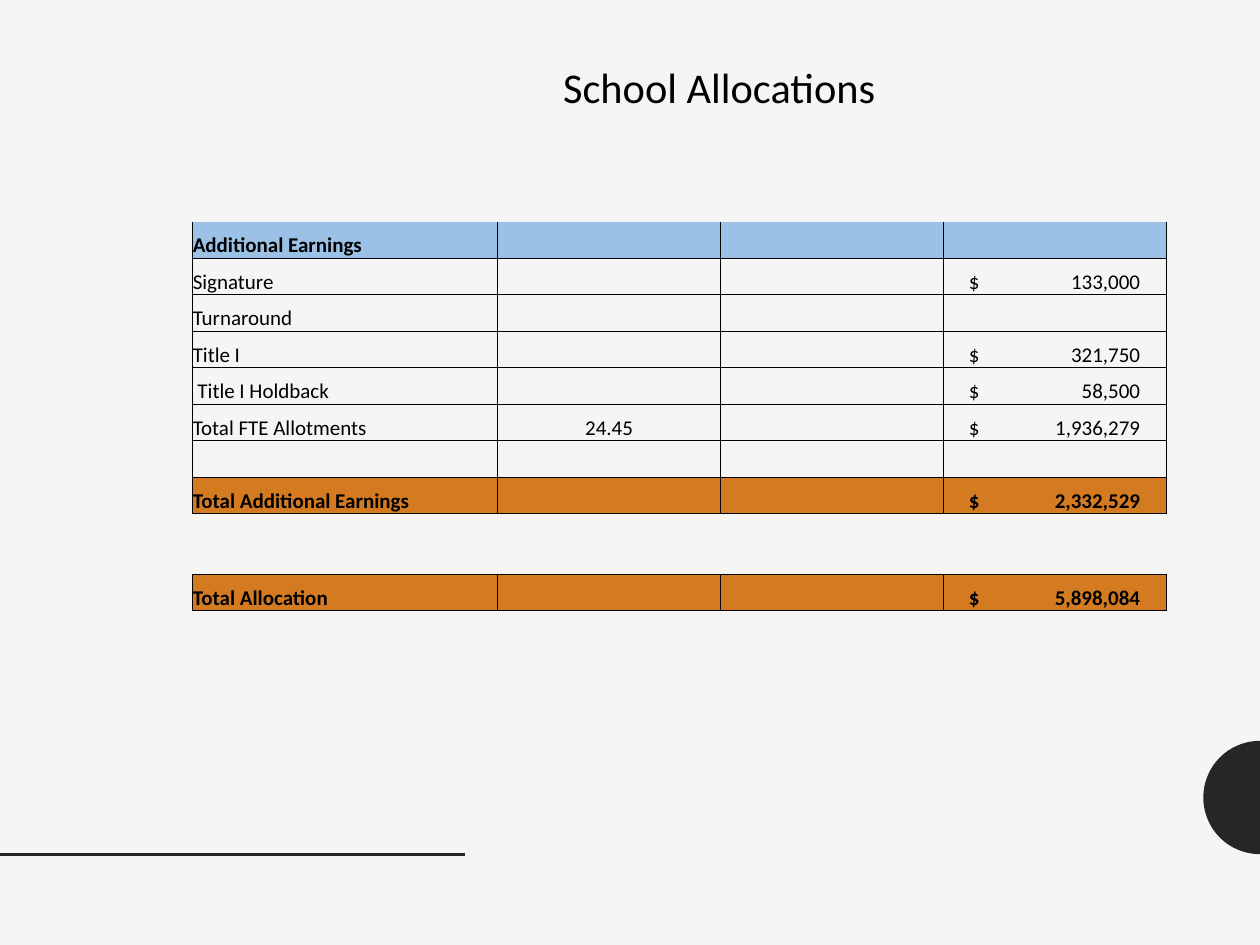
from math import cos, pi, sin

from lxml.etree import SubElement
from pptx import Presentation
from pptx.dml.color import RGBColor as RGB
from pptx.enum.text import MSO_ANCHOR as Anchor, PP_ALIGN as Align
from pptx.enum.shapes import MSO_CONNECTOR as Link
from pptx.oxml.ns import qn
from pptx.util import Inches, Pt

HUES = {"back": "F5F5F5", "dark": "262626", "ink": "000000",
        "blue": "9BC2E6", "gold": "D47B22"}
FONT = "Calibri"

# label, staff count, amount, fill
ROWS = [
    ("Additional Earnings", "", "", "blue"),
    ("Signature", "", "133,000", None),
    ("Turnaround", "", "", None),
    ("Title I", "", "321,750", None),
    ("\u00a0Title I Holdback".replace("\u00a0", " "), "", "58,500", None),
    ("Total FTE Allotments", "24.45", "1,936,279", None),
    ("", "", "", None),
    ("Total Additional Earnings", "", "2,332,529", "gold"),
    ("", "", "", None),
    ("", "", "", None),
    ("Total Allocation", "", "5,898,084", "gold"),
]
GAPS = (8, 9)


def color(name):
    return RGB.from_string(HUES[name])


def border(cell, sides):
    """Rule the given sides of a cell and clear the others."""
    props = cell._tc.get_or_add_tcPr()
    for side in "LRTB":
        line = SubElement(props, qn(f"a:ln{side}"), w=str(Pt(0.5)))
        if side in sides:
            fill = SubElement(line, qn("a:solidFill"))
            SubElement(fill, qn("a:srgbClr"), val=HUES["ink"])
        else:
            SubElement(line, qn("a:noFill"))


deck = Presentation()
deck.slide_width, deck.slide_height = Inches(10), Inches(7.5)
slide = deck.slides.add_slide(deck.slide_layouts[5])
slide.background.fill.solid()
slide.background.fill.fore_color.rgb = color("back")
shapes = slide.shapes

# Half disc on the right edge
mid, rad, steps = 6.33, 0.45, 32
turns = [pi * i / steps for i in range(steps + 1)]
arc = [(Inches(10 - rad * sin(t)), Inches(mid - rad * cos(t))) for t in turns]
pen = shapes.build_freeform(*arc[0])
pen.add_line_segments(arc[1:], close=True)
disc = pen.convert_to_shape()
disc.shadow.inherit = False
disc.fill.solid()
disc.fill.fore_color.rgb = color("dark")
disc.line.fill.background()

# Rule at the lower left
rule = shapes.add_connector(Link.STRAIGHT, 0, Inches(6.78), Inches(3.69), Inches(6.78))
rule.line.color.rgb = color("dark")
rule.line.width = Pt(2)
SubElement(rule._element.spPr, qn("a:effectLst"))

# Allocation table
table = shapes.add_table(len(ROWS), 4, Inches(1.53), Inches(1.76),
                         Inches(7.73), Inches(3.09)).table
table.first_row = table.horz_banding = False
for col, width in zip(table.columns, (2.42, 1.77, 1.77, 1.77)):
    col.width = Inches(width)

for r, (label, count, sum_, hue) in enumerate(ROWS):
    table.rows[r].height = Inches(0.24 if r in GAPS else 0.29)
    sides = {0: "LRB", 8: "T", 9: "B"}.get(r, "LRTB")
    money = f"$\t{sum_}" if sum_ else ""
    for c, text in enumerate((label, count, "", money)):
        cell = table.cell(r, c)
        border(cell, sides)
        if hue:
            cell.fill.solid()
            cell.fill.fore_color.rgb = color(hue)
        else:
            cell.fill.background()
        cell.vertical_anchor = Anchor.BOTTOM
        cell.margin_left = Inches(0.2 if c == 3 else 0)
        cell.margin_right = cell.margin_top = cell.margin_bottom = 0
        cell.text = text
        para = cell.text_frame.paragraphs[0]
        para.alignment = Align.CENTER if c == 1 else Align.LEFT
        if c == 3 and text:
            tabs = SubElement(para._p.get_or_add_pPr(), qn("a:tabLst"))
            SubElement(tabs, qn("a:tab"), pos=str(Inches(1.36)), algn="r")
        font = para.font
        font.name, font.size, font.bold = FONT, Pt(12), bool(hue)
        font.color.rgb = color("ink")
        if not text:
            SubElement(para._p, qn("a:endParaRPr"), sz="1200")

# Title
title = shapes.title
title.left, title.top = Inches(1.21), Inches(0.51)
title.width, title.height = Inches(9), Inches(0.43)
title.text_frame.text = "School Allocations"
title.text_frame.vertical_anchor = Anchor.MIDDLE
para = title.text_frame.paragraphs[0]
para.alignment = Align.CENTER
para.line_spacing = 0.8
para.font.name, para.font.size = FONT, Pt(24.2)
para.font.color.rgb = color("ink")

deck.save("out.pptx")
